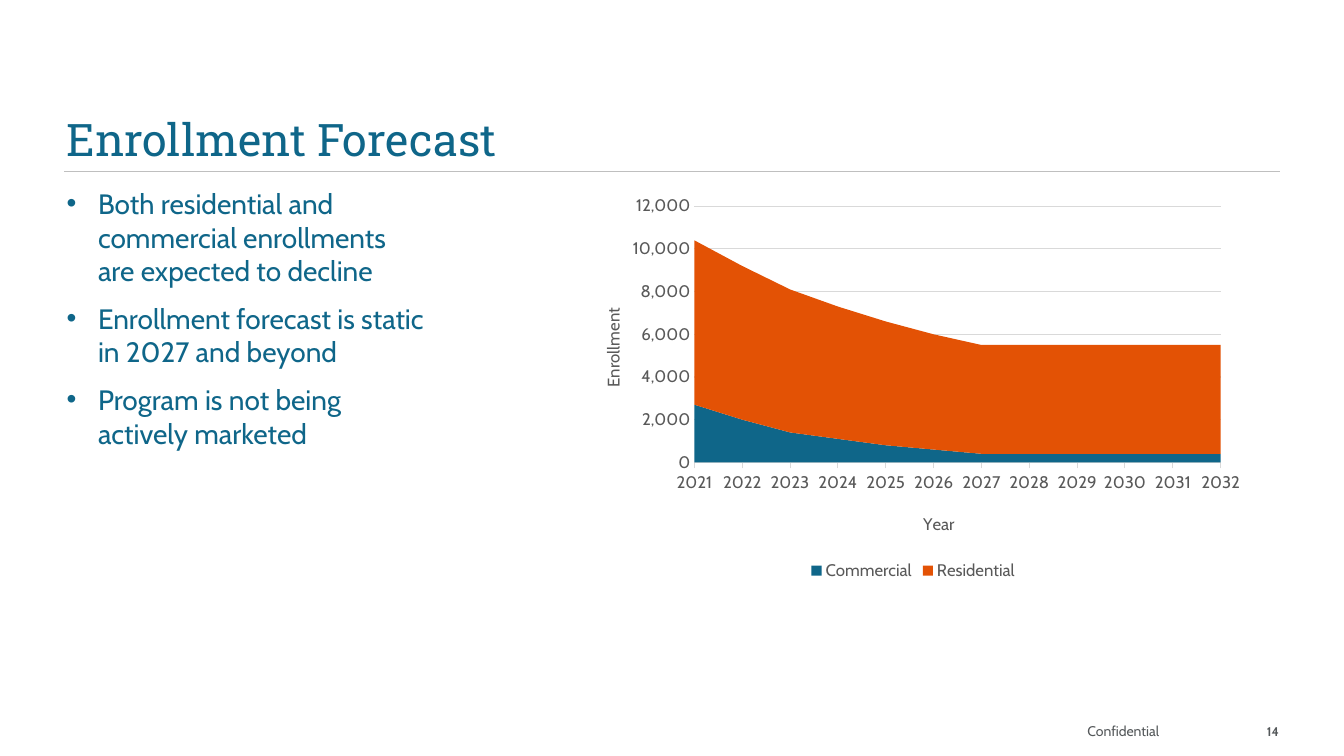
from lxml import etree
from pptx import Presentation
from pptx.chart.data import CategoryChartData
from pptx.dml.color import RGBColor
from pptx.enum.chart import XL_CHART_TYPE, XL_LEGEND_POSITION, XL_TICK_MARK
from pptx.enum.text import MSO_ANCHOR, MSO_AUTO_SIZE, PP_ALIGN
from pptx.oxml.ns import qn
from pptx.util import Pt

AREA_STACKED = XL_CHART_TYPE.AREA_STACKED
LEGEND_BOTTOM = XL_LEGEND_POSITION.BOTTOM
TICK_NONE, TICK_OUT = XL_TICK_MARK.NONE, XL_TICK_MARK.OUTSIDE
TOP, BOTTOM = MSO_ANCHOR.TOP, MSO_ANCHOR.BOTTOM
LEFT, RIGHT = PP_ALIGN.LEFT, PP_ALIGN.RIGHT

# Content
TITLE = "Enrollment Forecast"
POINTS = [
    "Both residential and commercial enrollments are expected to decline",
    "Enrollment forecast is static in 2027 and beyond",
    "Program is not being actively marketed",
]
YEARS = [str(year) for year in range(2021, 2033)]
ENROLLMENT = [
    ("Commercial", "0F6689", [2700, 2000, 1400, 1100, 800, 600] + [400] * 6),
    ("Residential", "E35205", [7700, 7200, 6700, 6200, 5800, 5400] + [5100] * 6),
]
CONFIDENTIALITY, PAGE = "Confidential", "14"

# Style
BLUE, FOOTER_GREY, CHART_GREY = "0F6689", "54585A", "595959"
RULE_GREY, GRID_GREY = "BFBFBF", "D9D9D9"
HEADING_FONT, BODY_FONT = "Roboto Slab", "Cabin"

# Geometry in points
SLIDE_W, SLIDE_H = 960, 540
MARGIN = 47.5
RULE_X, RULE_Y, RULE_END = 46, 122.4, 914.4
BULLET_INDENT = 22.5


def color(hex_value):
    return RGBColor.from_string(hex_value)


def style_font(font, name, size, hex_value, bold=False):
    font.name, font.size, font.bold = name, Pt(size), bold
    font.color.rgb = color(hex_value)


def setup_frame(shape, anchor, left_inset, right_inset):
    frame = shape.text_frame
    frame.word_wrap, frame.auto_size = True, MSO_AUTO_SIZE.NONE
    frame.vertical_anchor = anchor
    frame.margin_left, frame.margin_right = Pt(left_inset), Pt(right_inset)
    frame.margin_top = frame.margin_bottom = Pt(3.6)
    return frame


def place(shape, left, top, width, height):
    shape.left, shape.top = Pt(left), Pt(top)
    shape.width, shape.height = Pt(width), Pt(height)


def add_run(paragraph, text, *font_style):
    run = paragraph.add_run()
    run.text = text
    style_font(run.font, *font_style)


def set_layout(parent, index, inner=False, **fractions):
    """Position a chart part by fractions of the chart area."""
    for old in parent.findall(qn("c:layout")):
        parent.remove(old)
    layout = etree.Element(qn("c:layout"))
    parent.insert(index, layout)
    manual = etree.SubElement(layout, qn("c:manualLayout"))
    settings = {"layoutTarget": "inner"} if inner else {}
    settings.update(xMode="edge", yMode="edge", **fractions)
    for tag, value in settings.items():
        etree.SubElement(manual, qn("c:" + tag)).set("val", str(value))


def title_axis(axis, text, x, y):
    add_run(axis.axis_title.text_frame.paragraphs[0], text,
            BODY_FONT, 12, CHART_GREY)
    set_layout(axis.axis_title._element, 1, x=x, y=y)
    style_font(axis.tick_labels.font, BODY_FONT, 12, CHART_GREY)


prs = Presentation()
prs.slide_width, prs.slide_height = Pt(SLIDE_W), Pt(SLIDE_H)
slide = prs.slides.add_slide(prs.slide_layouts[5])

# Title and rule
title = slide.shapes.title
place(title, MARGIN, 50.4, 864.7, 72)
heading = setup_frame(title, BOTTOM, 0, 108).paragraphs[0]
heading.alignment, heading.line_spacing = LEFT, 0.9
add_run(heading, TITLE, HEADING_FONT, 32, BLUE)

rule = slide.shapes.add_connector(1, Pt(RULE_X), Pt(RULE_Y), Pt(RULE_END), Pt(RULE_Y))
rule.line.color.rgb, rule.line.width = color(RULE_GREY), Pt(1)
etree.SubElement(rule._element.spPr, qn("a:effectLst"))

# Bulleted points
points_box = slide.shapes.add_textbox(Pt(MARGIN), Pt(129.6), Pt(265.7), Pt(350))
points_frame = setup_frame(points_box, TOP, 0, 7.2)
for number, point in enumerate(POINTS):
    item = points_frame.add_paragraph() if number else points_frame.paragraphs[0]
    props = item._p.get_or_add_pPr()
    props.set("marL", str(Pt(BULLET_INDENT)))
    props.set("indent", str(-Pt(BULLET_INDENT)))
    etree.SubElement(props, qn("a:buFont")).set("typeface", "Arial")
    etree.SubElement(props, qn("a:buChar")).set("char", "•")
    if number:
        item.space_before = Pt(10)
    add_run(item, point, BODY_FONT, 20, BLUE)

# Stacked area chart
data = CategoryChartData(number_format="#,##0")
data.categories = YEARS
for name, _, values in ENROLLMENT:
    data.add_series(name, values)
chart = slide.shapes.add_chart(AREA_STACKED, Pt(408.2), Pt(136.1), Pt(488.2),
                               Pt(281.5), data).chart
chart.has_title = False
style_font(chart.font, BODY_FONT, 12, CHART_GREY)
for series, (_, fill, _) in zip(chart.plots[0].series, ENROLLMENT):
    series.format.fill.solid()
    series.format.fill.fore_color.rgb = color(fill)
set_layout(chart._chartSpace.chart.plotArea, 0, inner=True,
           x=0.18, y=0.04, w=0.77, h=0.65)

year_axis, count_axis = chart.category_axis, chart.value_axis
title_axis(year_axis, "Year", 0.51, 0.81)
title_axis(count_axis, "Enrollment", 0.04, 0.29)
year_axis.has_major_gridlines = False
year_axis.major_tick_mark = TICK_OUT
count_axis.major_tick_mark = TICK_NONE
count_axis.minimum_scale, count_axis.maximum_scale = 0, 12000
count_axis.major_unit = 2000
count_axis.tick_labels.number_format = "#,##0"
count_axis.tick_labels.number_format_is_linked = False
count_axis.format.line.fill.background()
for line in (year_axis.format.line, count_axis.major_gridlines.format.line):
    line.color.rgb, line.width = color(GRID_GREY), Pt(0.75)

chart.has_legend = True
chart.legend.position = LEGEND_BOTTOM
chart.legend.include_in_layout = False
style_font(chart.legend.font, BODY_FONT, 12, CHART_GREY)

# Footer
for text, left, width, size, bold, alignment in [
    (CONFIDENTIALITY, 769.7, 92.9, 10, False, LEFT),
    (PAGE, 872.6, 41, 9, True, RIGHT),
]:
    footer = slide.shapes.add_textbox(Pt(left), Pt(502.6), Pt(width), Pt(28.8))
    footer_line = setup_frame(footer, BOTTOM, 7.2, 0).paragraphs[0]
    footer_line.alignment = alignment
    add_run(footer_line, text, BODY_FONT, size, FOOTER_GREY, bold)

prs.save("out.pptx")
